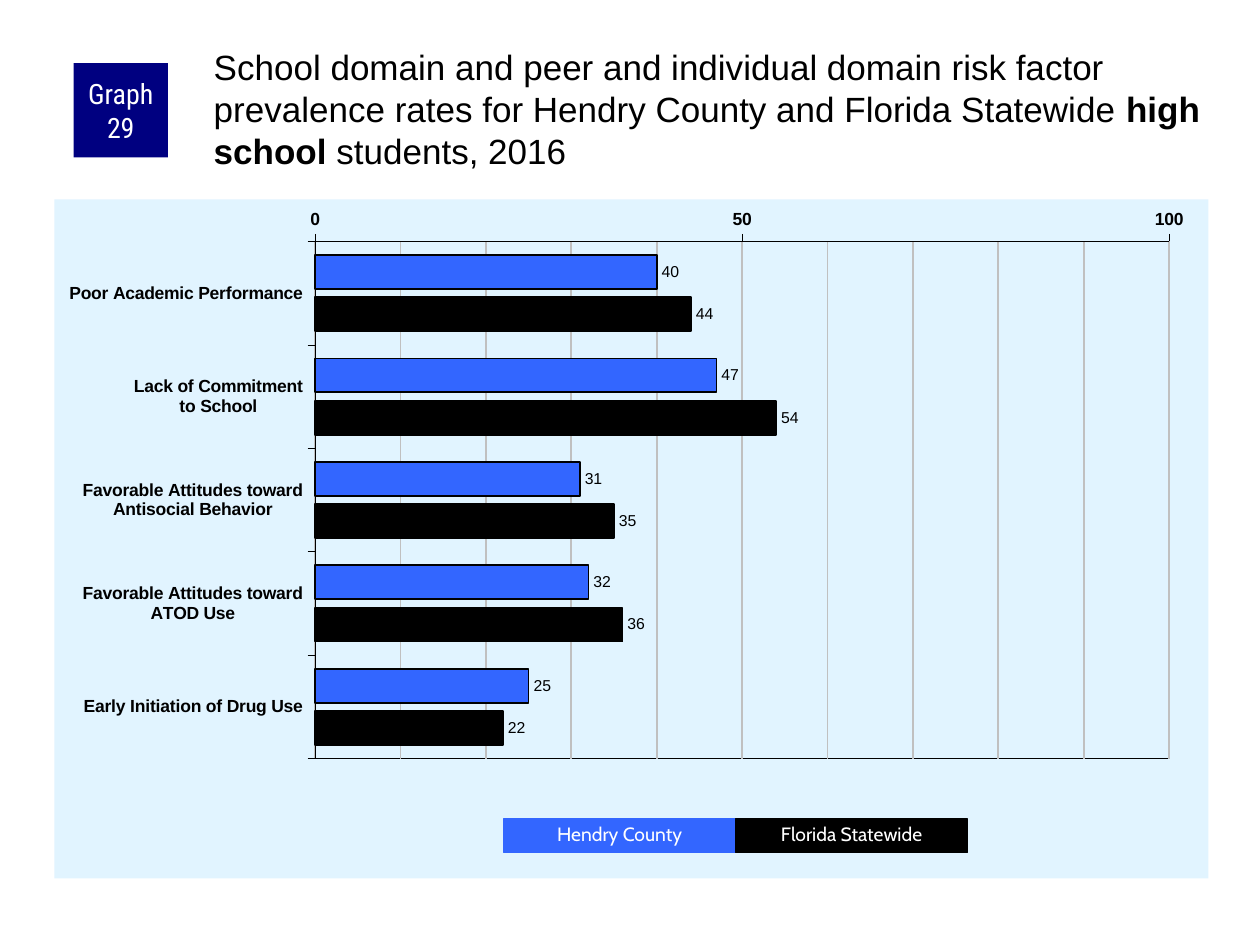
from dataclasses import dataclass

from lxml import etree
from pptx import Presentation
from pptx.chart import data as cd
from pptx.dml.color import RGBColor
from pptx.enum import chart as ch, shapes, text
from pptx.oxml import ns, parse_xml
from pptx.util import Pt


@dataclass(frozen=True)
class Theme:
    navy: str = "000080"
    blue: str = "3366FF"
    black: str = "000000"
    white: str = "FFFFFF"
    pale: str = "E1F4FF"
    gray: str = "C0C0C0"
    sans: str = "Arial"
    badge: str = "Roboto Condensed"
    key: str = "Cabin"
    title: float = 20
    mark: float = 16
    small: float = 11
    axis: float = 10
    label: float = 9


@dataclass(frozen=True)
class Box:
    left: float
    top: float
    width: float
    height: float

    def spans(self) -> list:
        return [Pt(v) for v in (self.left, self.top, self.width, self.height)]


@dataclass(frozen=True)
class Group:
    name: str
    color: str
    rates: tuple


T = Theme()
GROUPS = (
    Group("Hendry County", T.blue, (40, 47, 31, 32, 25)),
    Group("Florida Statewide", T.black, (44, 54, 35, 36, 22)),
)
RISKS = (
    "Poor Academic Performance",
    "Lack of Commitment\nto School",
    "Favorable Attitudes toward\nAntisocial Behavior",
    "Favorable Attitudes toward\nATOD Use",
    "Early Initiation of Drug Use",
)
PLOT = {"x": 0.226, "y": 0.062, "w": 0.74, "h": 0.762}


def assign(item, values: dict) -> None:
    for name, value in values.items():
        setattr(item, name, value)


def style(font, face: str, size: float, color: str, bold: bool = False) -> None:
    assign(font, {"name": face, "size": Pt(size), "bold": bold})
    font.color.rgb = RGBColor.from_string(color)


def paint(fill, color: str) -> None:
    fill.solid()
    fill.fore_color.rgb = RGBColor.from_string(color)


def stroke(line, color: str, width: float) -> None:
    paint(line.fill, color)
    line.width = Pt(width)


def add_text(para, words: str, face: str, size: float, color: str,
             bold: bool = False) -> None:
    run = para.add_run()
    run.text = words
    style(run.font, face, size, color, bold)


def add_block(slide, box: Box, color: str, words: str, face: str, size: float,
              frame: dict, para: dict, edge: float = 0) -> None:
    block = slide.shapes.add_shape(shapes.MSO_SHAPE.RECTANGLE, *box.spans())
    block.shadow.inherit = False
    paint(block.fill, color)
    if edge:
        stroke(block.line, color, edge)
    else:
        block.line.fill.background()
    assign(block.text_frame, {"word_wrap": True,
                              "vertical_anchor": text.MSO_ANCHOR.MIDDLE, **frame})
    first = block.text_frame.paragraphs[0]
    assign(first, {"alignment": text.PP_ALIGN.CENTER, **para})
    add_text(first, words, face, size, T.white)


def solid(color: str) -> str:
    return f'<a:solidFill><a:srgbClr val="{color}"/></a:solidFill>'


def edge_xml(color: str, width: float) -> str:
    return f'<a:ln w="{Pt(width)}">{solid(color)}</a:ln>'


def area(inner: str):
    return parse_xml(f'<c:spPr {ns.nsdecls("c", "a")}>{inner}</c:spPr>')


def dress(chart) -> None:
    """Chart background, plot border, minor grid and fixed plot position."""
    root = chart.element
    texts = root.find(ns.qn("c:txPr"))
    texts.addprevious(area(solid(T.pale) + "<a:ln><a:noFill/></a:ln>"))
    plot = root.find(ns.qn("c:chart")).find(ns.qn("c:plotArea"))
    plot.append(area("<a:noFill/>" + edge_xml(T.black, 0.5)))
    for grid in plot.iter(ns.qn("c:minorGridlines")):
        grid.append(area(edge_xml(T.gray, 1)))
    for old in plot.findall(ns.qn("c:layout")):
        plot.remove(old)
    layout = etree.Element(ns.qn("c:layout"))
    manual = etree.SubElement(layout, ns.qn("c:manualLayout"))
    rules = {"layoutTarget": "inner", "xMode": "edge", "yMode": "edge", **PLOT}
    for tag, value in rules.items():
        etree.SubElement(manual, ns.qn(f"c:{tag}")).set("val", str(value))
    plot.insert(0, layout)


def add_bars(slide, box: Box) -> None:
    data = cd.CategoryChartData()
    data.categories = RISKS
    for group in GROUPS:
        data.add_series(group.name, group.rates)
    chart = slide.shapes.add_chart(
        ch.XL_CHART_TYPE.BAR_CLUSTERED, *box.spans(), data).chart
    assign(chart, {"has_legend": False, "has_title": False})
    style(chart.font, T.sans, T.axis, T.black)

    # Axes and grid
    cats, rates = chart.category_axis, chart.value_axis
    assign(cats, {"reverse_order": True, "crosses": ch.XL_AXIS_CROSSES.MAXIMUM})
    assign(rates, {"minimum_scale": 0, "maximum_scale": 100, "major_unit": 50,
                   "minor_unit": 10, "has_minor_gridlines": True})
    for axis in (cats, rates):
        axis.major_tick_mark = ch.XL_TICK_MARK.OUTSIDE
        axis.minor_tick_mark = ch.XL_TICK_MARK.NONE
        style(axis.tick_labels.font, T.sans, T.axis, T.black, True)
        stroke(axis.format.line, T.black, 0.25)
    stroke(rates.major_gridlines.format.line, T.gray, 1)

    # Bars and value labels
    plot = chart.plots[0]
    assign(plot, {"gap_width": 80, "overlap": -25, "vary_by_categories": False})
    for series, group in zip(plot.series, GROUPS):
        paint(series.format.fill, group.color)
        stroke(series.format.line, T.black, 1)
        labels = series.data_labels
        assign(labels, {"show_value": True,
                        "position": ch.XL_LABEL_POSITION.OUTSIDE_END})
        style(labels.font, T.sans, T.label, T.black)
    dress(chart)


def add_title(slide, box: Box, parts: tuple) -> None:
    frame = slide.shapes.add_textbox(*box.spans()).text_frame
    assign(frame, {"word_wrap": True, "margin_left": Pt(2.16),
                   "margin_top": Pt(2.16), "margin_right": 0, "margin_bottom": 0})
    for words, bold in parts:
        add_text(frame.paragraphs[0], words, T.sans, T.title, T.black, bold)


def main() -> None:
    deck = Presentation()
    assign(deck, {"slide_width": Pt(720), "slide_height": Pt(540)})
    slide = deck.slides.add_slide(deck.slide_layouts[6])

    add_bars(slide, Box(31, 113.9, 659.5, 388))

    # Heading
    add_block(slide, Box(42, 36, 54, 54), T.navy, "Graph 29", T.badge, T.mark,
              {"margin_left": Pt(3.6), "margin_right": Pt(3.6),
               "margin_top": 0, "margin_bottom": 0}, {})
    add_title(slide, Box(120, 24, 570, 60), (
        ("School domain and peer and individual domain risk factor prevalence "
         "rates for Hendry County and Florida Statewide ", False),
        ("high school", True),
        (" students, 2016", False),
    ))

    # Colour key
    wide = 132.6
    for i, group in enumerate(GROUPS):
        add_block(slide, Box(287.8 + i * wide, 468, wide, 19.1), group.color,
                  group.name, T.key, T.small,
                  {"auto_size": text.MSO_AUTO_SIZE.SHAPE_TO_FIT_TEXT},
                  {"line_spacing": 0.9}, 0.75)

    deck.save("out.pptx")


if __name__ == "__main__":
    main()
